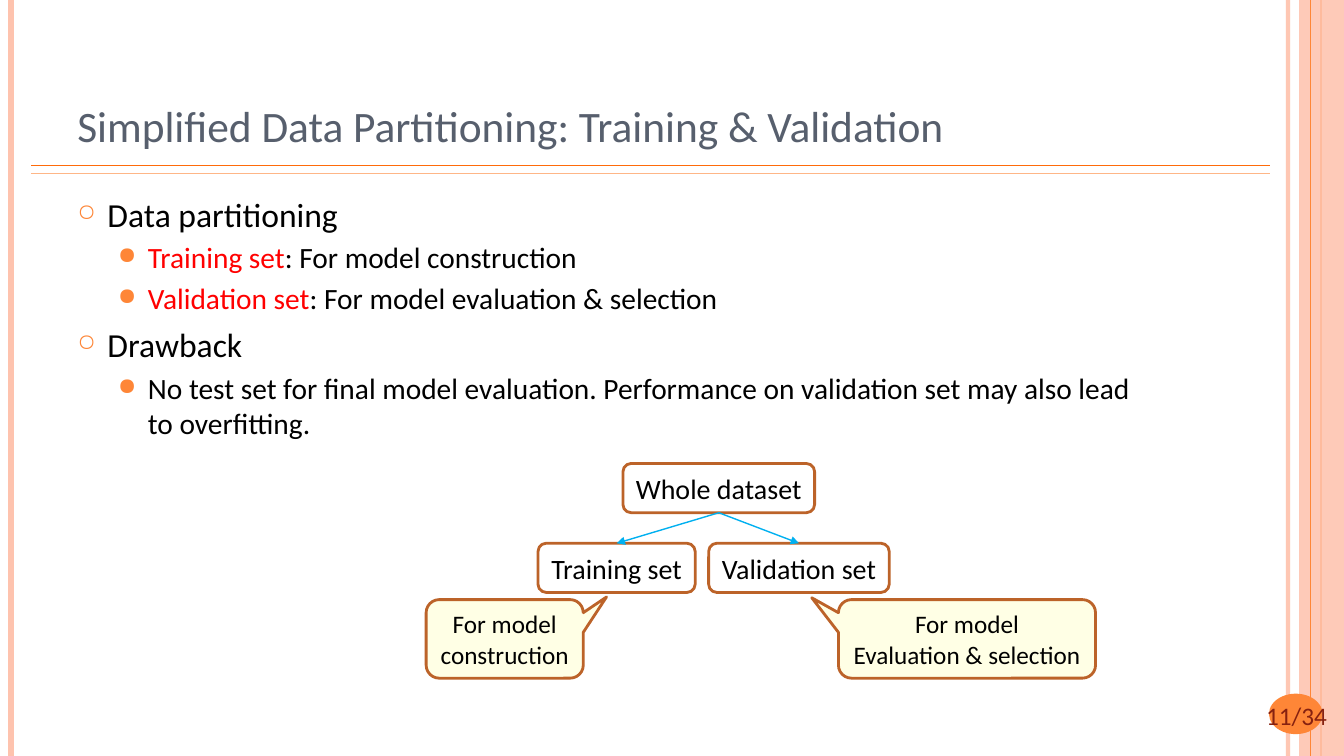
"""Build the slide on simplified data partitioning."""
from dataclasses import dataclass

from lxml.etree import SubElement
from pptx import Presentation
from pptx.dml.color import RGBColor
from pptx.enum.shapes import MSO_CONNECTOR, MSO_SHAPE as Preset
from pptx.enum.text import MSO_ANCHOR as Anchor, PP_ALIGN as Align
from pptx.oxml.ns import qn
from pptx.util import Cm, Pt

WIDTH, HEIGHT = 33.87, 19.05
ORANGE, PEACH, BROWN = "FE8637", "FEC3AE", "BC6329"
RED, BLACK, BLUE, CREAM = "FF0000", "000000", "00B0F0", "FFFFCC"


@dataclass
class Rule:
    start: tuple[float, float]
    end: tuple[float, float]
    color: str
    weight: float
    opacity: int = 100


@dataclass
class Node:
    lines: list[str]
    frame: tuple[float, float, float, float]
    size: int = 20
    pointer: tuple[float, float] | None = None


@dataclass
class Bullet:
    spans: list[tuple[str, str]]
    level: int = 0


@dataclass
class BulletStyle:
    mark: str
    scale: int
    indent: float
    size: int
    gap: int


BULLET_STYLES = [BulletStyle("○", 70, 0.76, 24, 6), BulletStyle("●", 80, 1.78, 21, 4)]
BULLETS = [
    Bullet([("Data partitioning", BLACK)]),
    Bullet([("Training set", RED), (": For model construction", BLACK)], 1),
    Bullet([("Validation set", RED), (": For model evaluation & selection", BLACK)], 1),
    Bullet([("Drawback", BLACK)]),
    Bullet([("No test set for final model evaluation. Performance on validation set "
             "may also lead to overfitting.", BLACK)], 1),
]
SIDE_RULES = [
    Rule((32.46, 0), (32.46, HEIGHT), PEACH, 3, 93),
    Rule((0.28, 0), (0.28, HEIGHT), PEACH, 4.5),
    Rule((33.3, 0), (33.3, HEIGHT), ORANGE, 1.5),
]
TITLE_RULES = [
    Rule((33.02, 0), (33.02, HEIGHT), ORANGE, 0.75),
    Rule((0.79, 4.17), (32, 4.17), "FF6B0A", 1),
    Rule((0.79, 4.37), (32, 4.37), "FEB687", 1),
]
WHOLE = Node(["Whole dataset"], (15.7, 11.68, 4.83, 1.24))
PARTS = [
    Node(["Validation set"], (17.86, 13.69, 4.55, 1.24)),
    Node(["Training set"], (13.56, 13.69, 3.96, 1.24)),
]
CALLOUTS = [
    Node(["For model", "Evaluation & selection"], (21.13, 15.11, 6.48, 1.98), 18, (-0.604, -0.524)),
    Node(["For model", "construction"], (10.74, 15.11, 3.96, 1.98), 18, (0.648, -0.534)),
]


def paint(target, color: str, opacity: int = 100) -> None:
    target.solid()
    target.fore_color.rgb = RGBColor.from_string(color)
    if opacity < 100:
        for tint in target._xPr.iter(qn("a:srgbClr")):
            SubElement(tint, qn("a:alpha"), val=str(opacity * 1000))


def add_span(para, text: str, *, size: float, color: str = BLACK) -> None:
    span = para.add_run()
    span.text = text
    span.font.name = "Calibri"
    span.font.size = Pt(size)
    paint(span.font.fill, color)


def add_line(page, rule: Rule):
    line = page.shapes.add_connector(
        MSO_CONNECTOR.STRAIGHT, *(Cm(value) for value in rule.start + rule.end))
    paint(line.line.fill, rule.color, rule.opacity)
    line.line.width = Pt(rule.weight)
    SubElement(line._element.spPr, qn("a:effectLst"))
    return line


def add_arrow(page, source, target) -> None:
    arrow = add_line(page, Rule((0, 0), (1, 1), BLUE, 1))
    arrow.begin_connect(source, 2)
    arrow.end_connect(target, 0)
    SubElement(arrow.line._get_or_add_ln(), qn("a:tailEnd"), type="triangle")


def add_shape(page, preset: Preset, frame: tuple[float, ...]):
    shape = page.shapes.add_shape(preset, *map(Cm, frame))
    shape.shadow.inherit = False
    return shape


def add_block(page, color: str, preset: Preset, frame: tuple[float, ...], opacity: int = 100) -> None:
    block = add_shape(page, preset, frame)
    paint(block.fill, color, opacity)
    block.line.fill.background()


def add_text(page, frame: tuple[float, ...], anchor: Anchor = Anchor.TOP):
    box = page.shapes.add_textbox(*map(Cm, frame)).text_frame
    box.word_wrap = True
    box.vertical_anchor = anchor
    return box


def add_node(page, node: Node):
    preset = Preset.ROUNDED_RECTANGULAR_CALLOUT if node.pointer else Preset.ROUNDED_RECTANGLE
    shape = add_shape(page, preset, node.frame)
    if node.pointer:
        shape.adjustments[0], shape.adjustments[1] = node.pointer
        paint(shape.fill, CREAM, 50)
    else:
        shape.fill.background()
    paint(shape.line.fill, BROWN)
    shape.line.width = Pt(2)
    box = shape.text_frame
    box.word_wrap = False
    box.vertical_anchor = Anchor.MIDDLE
    for index, text in enumerate(node.lines):
        para = box.add_paragraph() if index else box.paragraphs[0]
        para.alignment = Align.CENTER
        add_span(para, text, size=node.size)
    return shape


def add_bullets(box, bullets: list[Bullet]) -> None:
    for index, bullet in enumerate(bullets):
        para = box.add_paragraph() if index else box.paragraphs[0]
        style = BULLET_STYLES[bullet.level]
        para.level = bullet.level
        if index:
            para.space_before = Pt(style.gap)
        layout = para._p.get_or_add_pPr()
        layout.set("marL", str(Cm(style.indent)))
        layout.set("indent", str(-Cm(0.76)))
        SubElement(SubElement(layout, qn("a:buClr")), qn("a:srgbClr"), val=ORANGE)
        SubElement(layout, qn("a:buSzPct"), val=str(style.scale * 1000))
        SubElement(layout, qn("a:buChar"), char=style.mark)
        for text, color in bullet.spans:
            add_span(para, text, size=style.size, color=color)


def main() -> None:
    deck = Presentation()
    deck.slide_width, deck.slide_height = Cm(WIDTH), Cm(HEIGHT)
    page = deck.slides.add_slide(deck.slide_layouts[6])
    for rule in SIDE_RULES:
        add_line(page, rule)
    add_block(page, PEACH, Preset.RECTANGLE, (32.74, 0, 1.13, HEIGHT), 87)
    for rule in TITLE_RULES:
        add_line(page, rule)
    add_block(page, ORANGE, Preset.OVAL, (31.98, 17.48, 1.35, 1.02))

    number = add_text(page, (31.14, 17.53, 3.07, 1.02)).paragraphs[0]
    number.alignment = Align.CENTER
    add_span(number, "11/34", size=18, color="862110")
    add_bullets(add_text(page, (1.7, 4.75, 27.66, 13.23)), BULLETS)
    title = add_text(page, (1.7, 0.76, 27.66, 3.18), Anchor.BOTTOM).paragraphs[0]
    add_span(title, "Simplified Data Partitioning: Training & Validation", size=31, color="575F6D")

    whole = add_node(page, WHOLE)
    for part in PARTS:
        add_arrow(page, whole, add_node(page, part))
    for callout in CALLOUTS:
        add_node(page, callout)
    deck.save("out.pptx")


if __name__ == "__main__":
    main()
